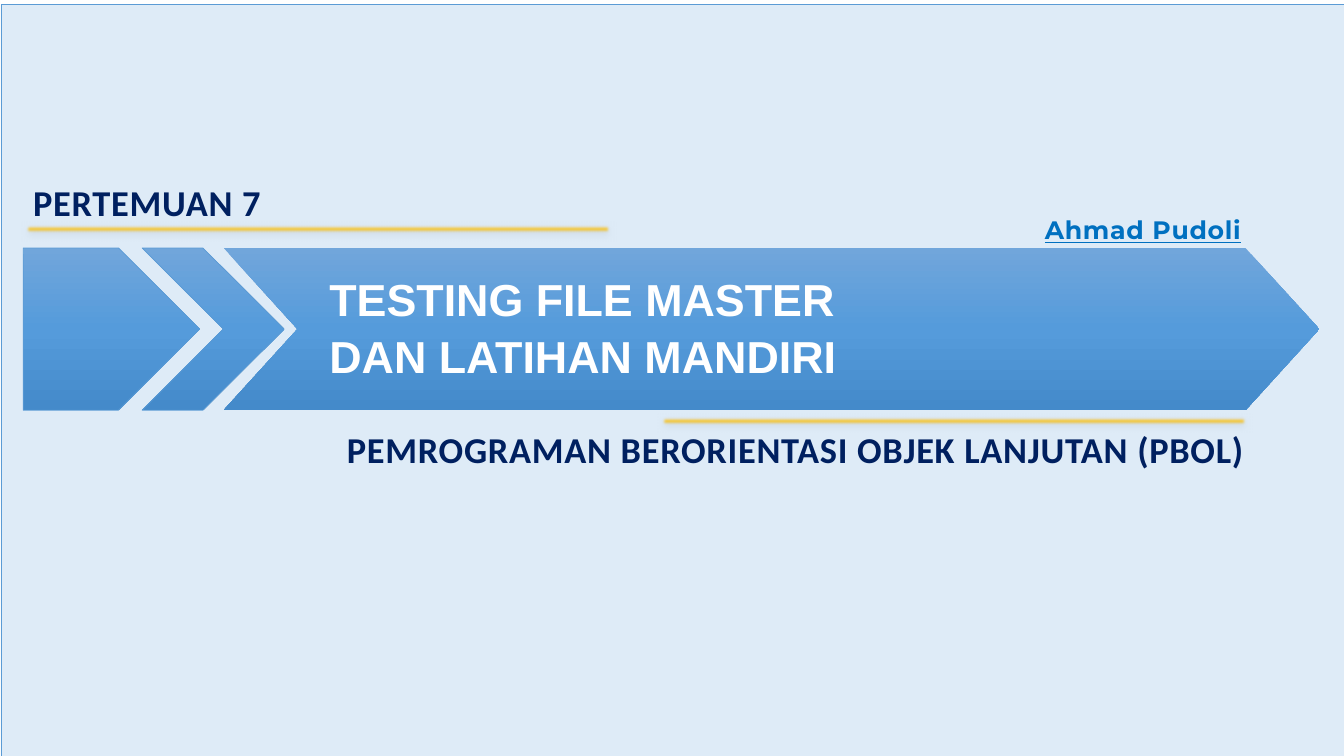
from copy import deepcopy
from dataclasses import dataclass
from typing import Optional

from lxml.etree import SubElement
from pptx import Presentation
from pptx.dml.color import RGBColor as Rgb
from pptx.enum.shapes import MSO_SHAPE as Kind
from pptx.enum.text import MSO_ANCHOR as Anchor, PP_ALIGN as Align
from pptx.oxml.ns import qn
from pptx.util import Pt


@dataclass(frozen=True)
class Theme:
    back: str = "DEEBF7"
    edge: str = "5B9BD5"
    navy: str = "002060"
    link: str = "0070C0"
    white: str = "FFFFFF"
    shade: str = "000000"
    blues: tuple = ("71A6DB", "559BDB", "448ACA")
    golds: tuple = ("FFC64B", "FFC000", "E3AB00")
    title: float = 32
    head: float = 26
    name: float = 18


@dataclass(frozen=True)
class Box:
    left: float
    top: float
    width: float
    height: float

    def pts(self) -> list:
        return [Pt(v) for v in (self.left, self.top, self.width, self.height)]


@dataclass(frozen=True)
class Form:
    kind: Kind
    box: Box
    fill: tuple
    edge: bool = False
    adj: Optional[float] = None
    glow: bool = False


@dataclass(frozen=True)
class Label:
    box: Box
    lines: tuple
    font: dict
    color: str
    align: Align = Align.LEFT
    track: float = 0
    pitch: float = 1


LOOK = Theme()
WIDE, HIGH = 960, 540
ROW, TALL = 177.1, 115.9
BAR_W, BAR_H = 418.3, 6.5
HEAD = {"name": "Calibri", "size": Pt(LOOK.head), "bold": True}
TITLE = {"name": "Arial", "size": Pt(LOOK.title), "bold": True}
NAME = {"name": "Montserrat", "size": Pt(LOOK.name), "bold": True,
        "underline": True}

FORMS = (
    Form(Kind.RECTANGLE, Box(0.7, 2.9, WIDE, HIGH), (LOOK.back,), edge=True),
    Form(Kind.PENTAGON, Box(16.6, ROW, 126, TALL), LOOK.blues, edge=True),
    Form(Kind.CHEVRON, Box(101.5, ROW, 101.5, TALL), LOOK.blues, edge=True,
         adj=0.572),
    Form(Kind.CHEVRON, Box(159.8, ROW, 782.6, TALL), LOOK.blues, adj=0.455),
    Form(Kind.RECTANGLE, Box(18, 160.6, BAR_W, BAR_H), LOOK.golds, glow=True),
    Form(Kind.RECTANGLE, Box(472.3, 297.4, BAR_W, BAR_H), LOOK.golds,
         glow=True),
)
LABELS = (
    Label(Box(16.6, 131, 336.2, 25.9), ("PERTEMUAN 7",), HEAD, LOOK.navy,
          track=0.5),
    Label(Box(143.3, 307.4, 753.1, 25.9),
          ("PEMROGRAMAN BERORIENTASI OBJEK LANJUTAN (PBOL)",), HEAD,
          LOOK.navy, Align.RIGHT, track=0.5),
    Label(Box(228.2, 191.8, 679, 82.1),
          ("TESTING FILE MASTER", "DAN LATIHAN MANDIRI"), TITLE, LOOK.white,
          pitch=1.05),
    Label(Box(642.2, 151.2, 251.3, 25.9), ("Ahmad Pudoli",), NAME, LOOK.link,
          Align.RIGHT, track=0.5),
)


def blend(shape, tones: tuple) -> None:
    """Fill from top to bottom with evenly spaced tones."""
    fill = shape.fill
    fill.gradient()
    fill.gradient_angle = 270
    stops = shape._element.spPr.find(".//" + qn("a:gsLst"))
    while len(stops) < len(tones):
        stops.append(deepcopy(stops[0]))
    for i, (stop, tone) in enumerate(zip(fill.gradient_stops, tones)):
        stop.position = i / (len(tones) - 1)
        stop.color.rgb = Rgb.from_string(tone)


def soften(shape) -> None:
    """Add a drop shadow and a soft edge."""
    fx = shape._element.spPr.find(qn("a:effectLst"))
    cast = SubElement(fx, qn("a:outerShdw"), blurRad=str(Pt(4.5)),
                      dist=str(Pt(1.5)), dir="5400000", rotWithShape="0")
    tint = SubElement(cast, qn("a:srgbClr"), val=LOOK.shade)
    SubElement(tint, qn("a:alpha"), val="63000")
    SubElement(fx, qn("a:softEdge"), rad=str(Pt(2.5)))


def draw(slide, form: Form) -> None:
    shape = slide.shapes.add_shape(form.kind, *form.box.pts())
    shape.shadow.inherit = False
    if form.adj is not None:
        shape.adjustments[0] = form.adj
    if len(form.fill) > 1:
        blend(shape, form.fill)
    else:
        shape.fill.solid()
        shape.fill.fore_color.rgb = Rgb.from_string(form.fill[0])
    if form.edge:
        shape.line.color.rgb = Rgb.from_string(LOOK.edge)
        shape.line.width = Pt(0.5)
    else:
        shape.line.fill.background()
    if form.glow:
        soften(shape)


def write(slide, label: Label) -> None:
    frame = slide.shapes.add_textbox(*label.box.pts()).text_frame
    frame.word_wrap = True
    frame.vertical_anchor = Anchor.MIDDLE
    for i, line in enumerate(label.lines):
        para = frame.add_paragraph() if i else frame.paragraphs[0]
        para.alignment = label.align
        para.line_spacing = label.pitch
        run = para.add_run()
        run.text = line
        for key, value in label.font.items():
            setattr(run.font, key, value)
        run.font.color.rgb = Rgb.from_string(label.color)
        if label.track:
            run._r.get_or_add_rPr().set("spc", str(int(label.track * 100)))


def main() -> None:
    deck = Presentation()
    deck.slide_width, deck.slide_height = Pt(WIDE), Pt(HIGH)
    slide = deck.slides.add_slide(deck.slide_layouts[6])
    for form in FORMS:
        draw(slide, form)
    for label in LABELS:
        write(slide, label)
    deck.save("out.pptx")


if __name__ == "__main__":
    main()
